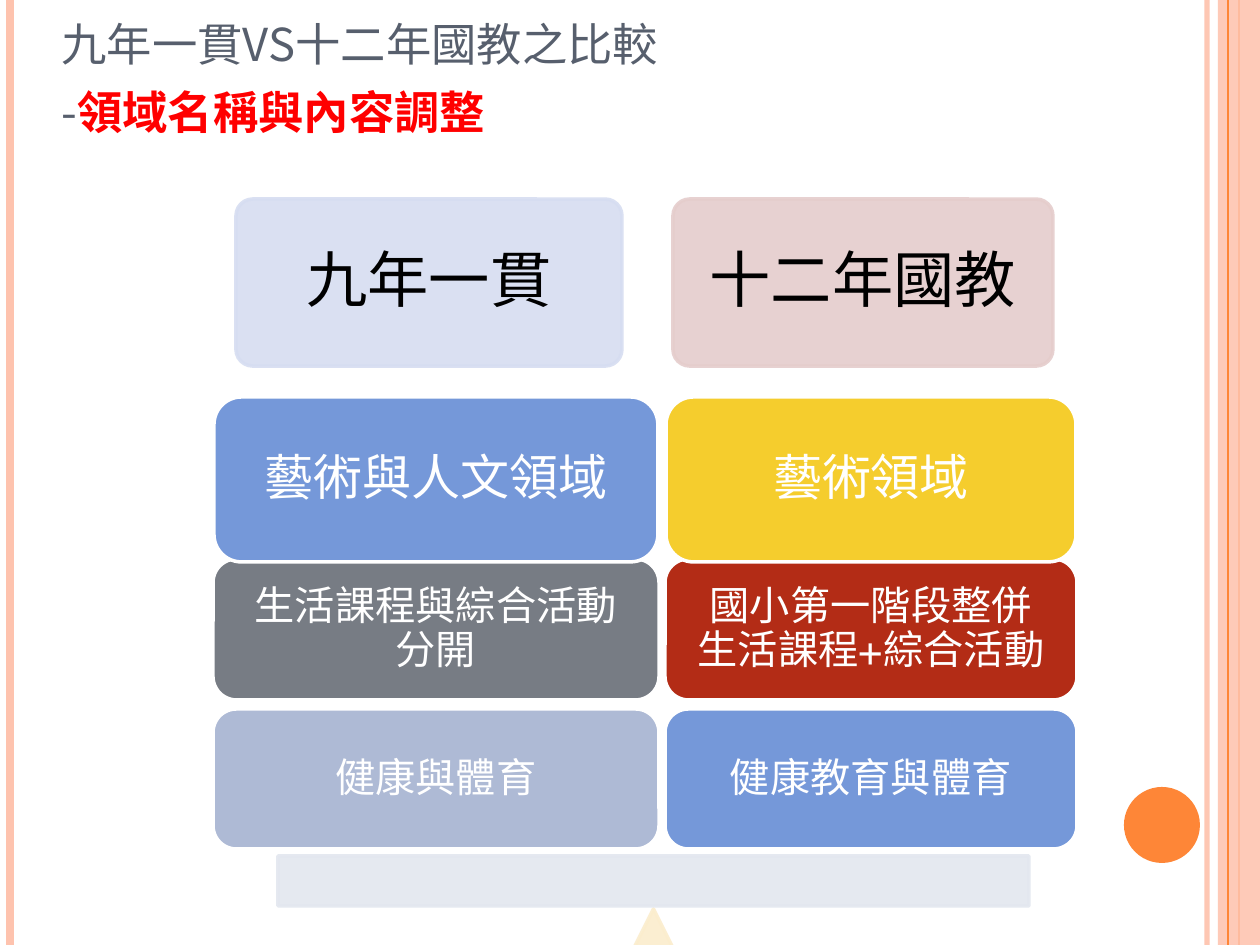
import pptx
import pptx.util
import pptx.dml.color
import pptx.enum.shapes
import pptx.enum.text
import pptx.oxml.ns
import lxml.etree

SCALE = 914400 / 126
SHAPE = pptx.enum.shapes.MSO_SHAPE
COLORS = {
    "peach": "FEC3AE", "orange": "FE8637", "slate": "575F6D", "red": "FF0000",
    "white": "FFFFFF", "black": "000000", "pale_blue": "D6DDF1",
    "pale_rose": "E5CDCC", "pale_gold": "FBEDCD", "mist": "E3E7EF",
    "blue": "7598D9", "yellow": "F5CD2D", "gray": "777C84", "brick": "B32C16",
    "lavender": "AEBAD5",
}
TITLE_FONT = "Noto Sans CJK SC"
BODY_FONT = "TeX Gyre Schola"


def px(length):
    """Turn pixels into EMU."""
    return pptx.util.Emu(round(length * SCALE))


def rgb(name):
    """Look up a named colour."""
    return pptx.dml.color.RGBColor.from_string(COLORS[name])


def add_child(parent, tag, **attributes):
    """Append a DrawingML element."""
    return lxml.etree.SubElement(parent, pptx.oxml.ns.qn(tag), **attributes)


def set_opacity(part, percent):
    """Make every solid colour of a shape or line partly transparent."""
    if percent < 100:
        for color in part._element.spPr.iter(pptx.oxml.ns.qn("a:srgbClr")):
            add_child(color, "a:alpha", val=str(percent * 1000))


def add_text(paragraph, text, *, size, color, font=BODY_FONT, bold=False, small_caps=False):
    """Add formatted text, with a line break at each newline."""
    for index, line in enumerate(text.split("\n")):
        if index:
            paragraph.add_line_break()
        run = paragraph.add_run()
        run.text = line
        run.font.size = pptx.util.Pt(size)
        run.font.bold = bold
        run.font.name = font
        run.font.color.rgb = rgb(color)
        properties = run.font._element
        if small_caps:
            properties.set("cap", "small")
        add_child(properties, "a:ea", typeface=TITLE_FONT)


def add_block(slide, kind, box, fill, line=None, opacity=100, radius=None):
    """Add a filled preset shape."""
    block = slide.shapes.add_shape(kind, *map(px, box))
    block.shadow.inherit = False
    block.fill.solid()
    block.fill.fore_color.rgb = rgb(fill)
    if line:
        block.line.color.rgb = rgb(line)
        block.line.width = pptx.util.Pt(2)
    else:
        block.line.fill.background()
    if radius is not None:
        block.adjustments[0] = radius
    set_opacity(block, opacity)
    return block


def add_label(block, text, size, color, inset):
    """Centre a label inside a block."""
    frame = block.text_frame
    frame.word_wrap = True
    frame.vertical_anchor = pptx.enum.text.MSO_ANCHOR.MIDDLE
    frame.margin_left = frame.margin_right = px(inset)
    frame.margin_top = frame.margin_bottom = px(inset)
    paragraph = frame.paragraphs[0]
    paragraph.alignment = pptx.enum.text.PP_ALIGN.CENTER
    paragraph.line_spacing = 0.9
    add_text(paragraph, text, size=size, color=color)


def add_rule(slide, x, height, color, width, opacity=100):
    """Add a vertical rule from the top of the slide."""
    rule = slide.shapes.add_connector(
        pptx.enum.shapes.MSO_CONNECTOR.STRAIGHT, px(x), 0, px(x), px(height))
    rule.line.color.rgb = rgb(color)
    rule.line.width = pptx.util.Pt(width)
    set_opacity(rule, opacity)
    add_child(rule._element.spPr, "a:effectLst")


def add_border(slide, left, top, width, height):
    """Draw the side rules, the right band and the disc."""
    right = left + width
    add_rule(slide, right - 53, height, "peach", 3, 93)
    add_rule(slide, left + 10, height, "peach", 4.5)
    add_rule(slide, right - 21, height, "orange", 1.5)
    add_block(slide, SHAPE.RECTANGLE, (right - 42, top, 42, height), "peach", opacity=87)
    add_rule(slide, right - 32, height, "orange", 0.75)
    add_block(slide, SHAPE.OVAL, (right - 136, top + 787, 76, 76), "orange")


def add_title(slide, left, top, width, height):
    """Write the two-line title."""
    title = slide.shapes.add_textbox(px(left), px(top), px(width), px(height))
    frame = title.text_frame
    frame.word_wrap = True
    frame.vertical_anchor = pptx.enum.text.MSO_ANCHOR.BOTTOM
    paragraph = frame.paragraphs[0]
    style = {"size": 32.4, "font": TITLE_FONT, "small_caps": True}
    add_text(paragraph, "九年一貫vs十二年國教之比較\n-", color="slate", **style)
    add_text(paragraph, "領域名稱與內容調整", color="red", bold=True, **style)


def add_balance(slide, left, top, width, height):
    """Draw the beam and the fulcrum under it."""
    beam = 50
    fulcrum = height - beam - 3
    add_block(slide, SHAPE.ISOSCELES_TRIANGLE,
              (left + (width - fulcrum) / 2, top + beam + 3, fulcrum, fulcrum),
              "pale_gold", "pale_gold", 90)
    add_block(slide, SHAPE.RECTANGLE, (left, top, width, beam), "mist", "mist", 90)


def add_column(slide, left, top, width, heading, heading_box, subjects):
    """Stack the subjects of one curriculum below its heading."""
    heading_left, heading_width, tint = heading_box
    block = add_block(slide, SHAPE.ROUNDED_RECTANGLE,
                      (left + heading_left, top, heading_width, 167), tint, tint, 90, 0.1)
    add_label(block, heading, 35, "black", 19)
    rows = [(198, 165, 28, 15, 1), (360, 141, 23, 12, 0), (510, 140, 23, 12, 0)]
    for (offset, height, size, inset, trim), (text, fill) in reversed(list(zip(rows, subjects))):
        box = (left + trim, top + offset, width - 2 * trim, height)
        block = add_block(slide, SHAPE.ROUNDED_RECTANGLE, box, fill, "white")
        add_label(block, text, size, "white", inset)


def main():
    """Build the comparison slide."""
    deck = pptx.Presentation()
    deck.slide_width, deck.slide_height = px(1260), px(945)
    slide = deck.slides.add_slide(deck.slide_layouts[6])
    add_border(slide, 0, 0, 1260, 945)
    add_title(slide, 49, 38, 1148, 109)
    add_balance(slide, 278, 856, 751, 178)
    add_column(slide, 665, 199, 412, "十二年國教", (8, 380, "pale_rose"), [
        ("藝術領域", "yellow"),
        ("國小第一階段整併\n生活課程+綜合活動", "brick"),
        ("健康教育與體育", "blue"),
    ])
    add_column(slide, 213, 199, 446, "九年一貫", (23, 386, "pale_blue"), [
        ("藝術與人文領域", "blue"),
        ("生活課程與綜合活動\n分開", "gray"),
        ("健康與體育", "lavender"),
    ])
    deck.save("out.pptx")


if __name__ == "__main__":
    main()
